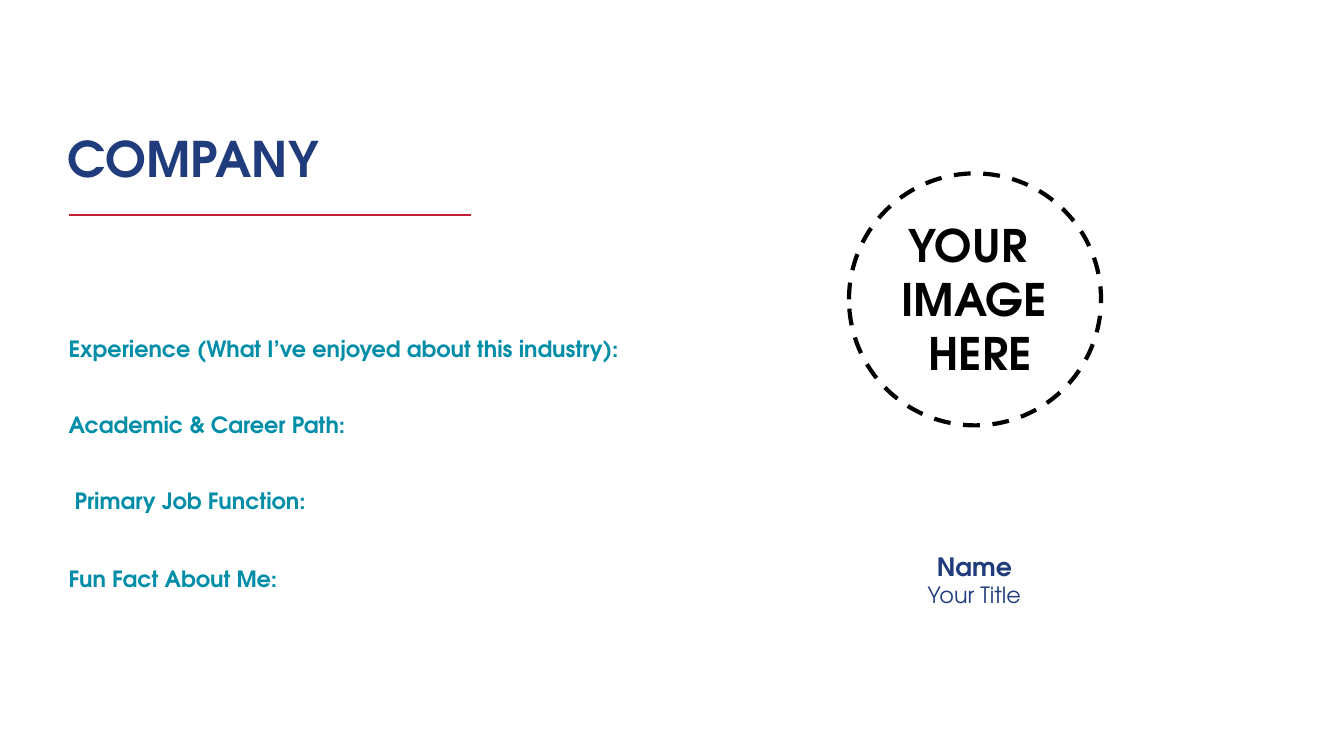
from pptx import Presentation
from pptx.dml.color import RGBColor
from pptx.enum.dml import MSO_LINE
from pptx.enum.shapes import MSO_CONNECTOR, MSO_SHAPE
from pptx.enum.text import MSO_ANCHOR, PP_ALIGN
from pptx.oxml.ns import qn
from pptx.util import Cm, Pt
from lxml.etree import SubElement

FONT = "TeX Gyre Adventor"
NAVY, TEAL, RED, BLACK = "203C7C", "008DA8", "C22032", "000000"


def rgb(value):
    return RGBColor.from_string(value)


def add_text(s, box, lines, size, color, align=PP_ALIGN.LEFT, anchor=MSO_ANCHOR.TOP):
    """Add bold lines, one paragraph each, and return the paragraphs."""
    tf = s.shapes.add_textbox(*map(Cm, box)).text_frame
    tf.word_wrap = True
    tf.vertical_anchor = anchor
    tf.margin_left = tf.margin_right = tf.margin_top = tf.margin_bottom = 0
    tf.text = "\n".join(lines)
    for p in tf.paragraphs:
        p.alignment = align
        for r in p.runs:
            r.font.name, r.font.size, r.font.bold = FONT, Pt(size), True
            r.font.color.rgb = rgb(color)
    return tf.paragraphs


def set_left_margins(paragraphs, margins):
    for p, margin in zip(paragraphs, margins):
        pPr = p._p.get_or_add_pPr()
        pPr.set("marL", str(Cm(margin)))
        pPr.set("indent", "0")


def add_heading(s, x, y, width):
    add_text(s, (x, y, 6.8, 1.55), ["COMPANY"], 35, NAVY, anchor=MSO_ANCHOR.MIDDLE)
    rule_x, rule_y = x + 0.05, y + 2.22
    rule = s.shapes.add_connector(MSO_CONNECTOR.STRAIGHT, Cm(rule_x), Cm(rule_y),
                                  Cm(rule_x + width), Cm(rule_y))
    rule.line.color.rgb = rgb(RED)
    rule.line.width = Pt(1.5)
    SubElement(rule._element.spPr, qn("a:effectLst"))


def add_prompts(s, x, y, width, height):
    prompts = ["Experience (What I’ve enjoyed about this industry):",
               "Academic & Career Path:", "Primary Job Function:", "Fun Fact About Me:"]
    paragraphs = add_text(s, (x, y, width, height), prompts, 16, TEAL)
    for p, gap in zip(paragraphs, (0, 35, 35, 36.5)):
        p.space_before = Pt(gap)
    set_left_margins(paragraphs, (0, 0, 0.15, 0))


def add_portrait(s, x, y, size):
    """Add a dashed circle whose label lines step to the right."""
    circle = s.shapes.add_shape(MSO_SHAPE.OVAL, Cm(x), Cm(y), Cm(size), Cm(size))
    circle.shadow.inherit = False
    circle.fill.background()
    circle.line.color.rgb = rgb(BLACK)
    circle.line.width = Pt(3)
    circle.line.dash_style = MSO_LINE.DASH
    label = (x + 0.8, y + 1.12, 4.4, size - 2.24)
    paragraphs = add_text(s, label, ["YOUR", "IMAGE", "HERE"], 32, BLACK, PP_ALIGN.CENTER)
    set_left_margins(paragraphs, (0, 0.3, 0.6))


def add_name(s, x, y, width, height):
    name, title = add_text(s, (x, y, width, height), ["Name", "Your Title"], 16, NAVY,
                           PP_ALIGN.CENTER)
    name.runs[0].font.size = Pt(18)
    title.runs[0].font.bold = False
    name.line_spacing, title.line_spacing = Pt(21.6), Pt(19.2)


def main():
    prs = Presentation()
    prs.slide_width, prs.slide_height = Cm(33.86), Cm(19.05)
    s = prs.slides.add_slide(prs.slide_layouts[6])
    add_heading(s, 1.7, 3.2, 10.11)
    add_prompts(s, 1.73, 8.45, 14.2, 6.5)
    add_portrait(s, 21.39, 4.37, 6.35)
    add_name(s, 23.32, 13.89, 2.46, 1.47)
    prs.save("out.pptx")


if __name__ == "__main__":
    main()
